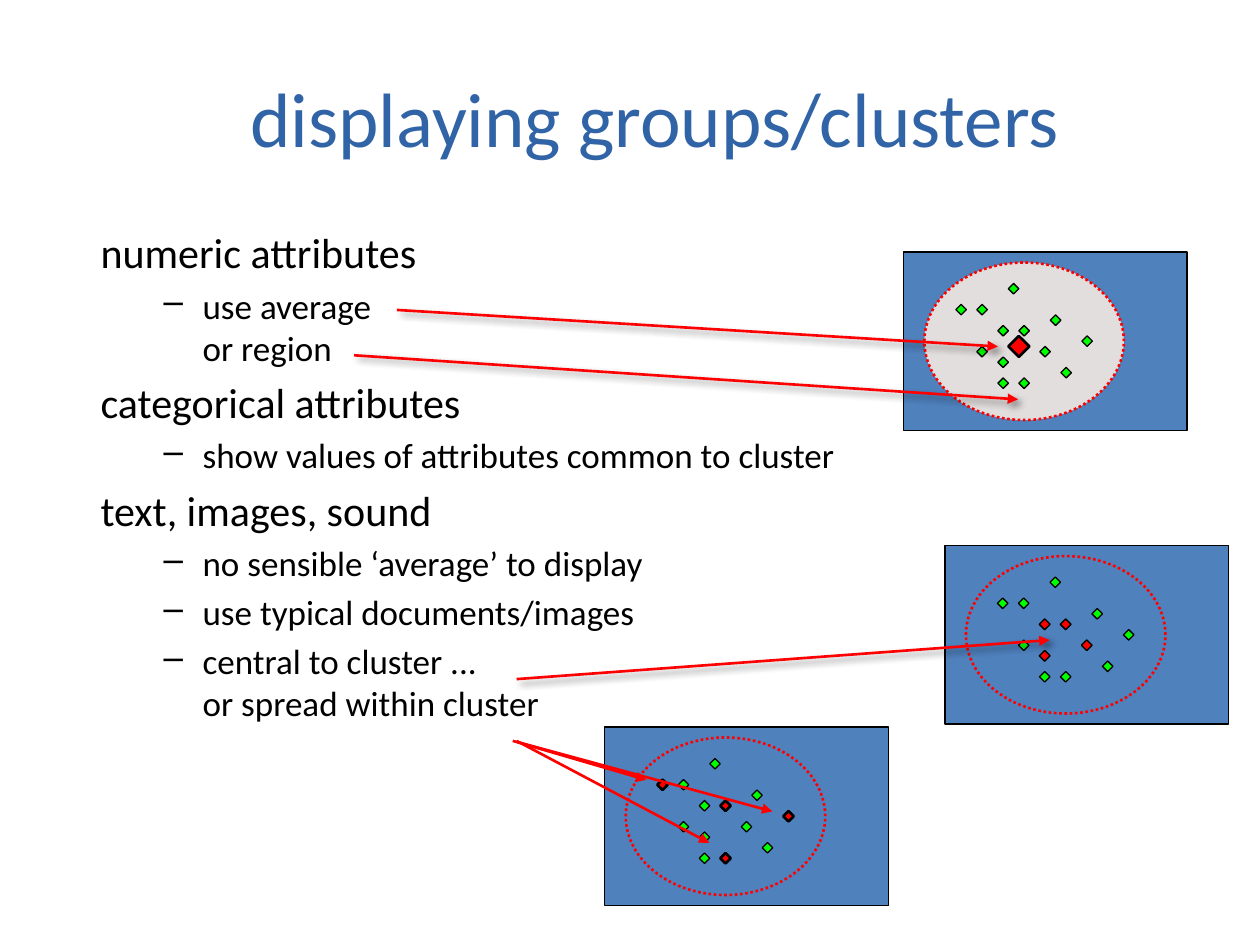
"""Builds a slide on displaying groups and clusters, with three scatter panels."""
from lxml import etree
from pptx import Presentation
from pptx.dml.color import RGBColor
from pptx.enum.dml import MSO_LINE
from pptx.enum.shapes import MSO_CONNECTOR, MSO_SHAPE
from pptx.enum.text import MSO_ANCHOR, PP_ALIGN
from pptx.oxml.ns import qn
from pptx.util import Inches, Pt

RECT, OVAL, DIAMOND = MSO_SHAPE.RECTANGLE, MSO_SHAPE.OVAL, MSO_SHAPE.DIAMOND
STRAIGHT, DOTTED = MSO_CONNECTOR.STRAIGHT, MSO_LINE.ROUND_DOT
TOP, MIDDLE = MSO_ANCHOR.TOP, MSO_ANCHOR.MIDDLE
LEFT, CENTER = PP_ALIGN.LEFT, PP_ALIGN.CENTER

THEME = {
    "font": "Calibri",
    "title": {"size": Pt(44), "color": RGBColor.from_string("3164A6")},
    "levels": [{"size": Pt(24), "color": RGBColor.from_string("000000")},
               {"size": Pt(20), "color": RGBColor.from_string("000000")}],
    "panel": RGBColor.from_string("4F81BD"),
    "region": RGBColor.from_string("E3DEDE"),
    "dot": RGBColor.from_string("00FF00"),
    "red": RGBColor.from_string("FF0000"),
    "black": RGBColor.from_string("000000"),
}
UNIT = 1 / 12
DOTS = [(5, 5), (7, 5), (9, 7), (11, 7), (7, 9), (9, 10), (11, 12),
        (9, 12), (13, 9), (10, 3), (14, 6), (15, 11), (17, 8)]
PANELS = [
    {"at": (7.17, 2), "region": "region", "marks": [(10, 8)], "size": 2, "width": 1.5},
    {"at": (7.5, 4.33), "region": None, "marks": [(9, 7), (11, 7), (9, 10), (13, 9)],
     "size": 1, "width": 0.75},
    {"at": (4.8, 5.77), "region": None, "marks": [(5, 5), (17, 8), (11, 7), (11, 12)],
     "size": 1, "width": 1.5},
]
ARROWS = [
    ((2.81, 2.82), (8.08, 3.17), True),
    ((3.15, 2.46), (7.92, 2.75), True),
    ((4.1, 5.39), (8.33, 5.08), True),
    ((4.07, 5.88), (5.13, 6.19), False),
    ((4.11, 5.89), (6.13, 6.44), False),
    ((4.1, 5.88), (5.63, 6.69), False),
]
BODY = [
    (0, "numeric attributes"),
    (1, "use average\vor region"),
    (0, "categorical attributes"),
    (1, "show values of attributes common to cluster"),
    (0, "text, images, sound"),
    (1, "no sensible ‘average’ to display"),
    (1, "use typical documents/images"),
    (1, "central to cluster ...\vor spread within cluster"),
]

prs = Presentation()
prs.slide_width, prs.slide_height = Inches(10), Inches(7.5)
s = prs.slides.add_slide(prs.slide_layouts[6])


def add_mark(kind, origin, cell, size, fill, line, width):
    x, y = (o + c * UNIT for o, c in zip(origin, cell))
    sp = s.shapes.add_shape(kind, Inches(x), Inches(y),
                            Inches(size[0] * UNIT), Inches(size[1] * UNIT))
    sp.shadow.inherit = False
    if fill:
        sp.fill.solid()
        sp.fill.fore_color.rgb = THEME[fill]
    else:
        sp.fill.background()
    sp.line.color.rgb = THEME[line]
    sp.line.width = Pt(width)
    return sp


def add_text(top, height, anchor, align, items):
    tf = s.shapes.add_textbox(Inches(0.7), Inches(top), Inches(9), Inches(height)).text_frame
    tf.word_wrap = True
    tf.vertical_anchor = anchor
    for i, (level, text, style) in enumerate(items):
        p = tf.paragraphs[0] if i == 0 else tf.add_paragraph()
        p.text, p.level, p.alignment = text, level, align
        if i:
            p.space_before = Pt(style["size"].pt * 0.2)
        if level:
            pPr = p._p.get_or_add_pPr()
            pPr.set("marL", str(Inches(0.81)))
            pPr.set("indent", str(Inches(-0.31)))
            etree.SubElement(pPr, qn("a:buChar"), char="–")
        for r in p.runs:
            r.font.name = THEME["font"]
            r.font.size = style["size"]
            r.font.color.rgb = style["color"]


add_text(0.3, 1.25, MIDDLE, CENTER, [(0, "displaying groups/clusters", THEME["title"])])
add_text(1.75, 4.95, TOP, LEFT,
         [(level, text, THEME["levels"][level]) for level, text in BODY])

for panel in PANELS:
    at = panel["at"]
    add_mark(RECT, at, (0, 0), (27, 17), "panel", "black", 0.75)
    oval = add_mark(OVAL, at, (2, 1), (19, 15), panel["region"], "red", 1.5)
    oval.line.dash_style = DOTTED
    for dot in DOTS:
        add_mark(DIAMOND, at, dot, (1, 1), "dot", "black", 0.75)
    for mark in panel["marks"]:
        add_mark(DIAMOND, at, mark, (panel["size"],) * 2, "red", "black", panel["width"])

for start, end, shadowed in ARROWS:
    cxn = s.shapes.add_connector(STRAIGHT, *(Inches(v) for v in start + end))
    cxn.line.color.rgb = THEME["red"]
    cxn.line.width = Pt(1.5)
    etree.SubElement(cxn.line._get_or_add_ln(), qn("a:tailEnd"), type="triangle")
    effects = etree.SubElement(cxn._element.spPr, qn("a:effectLst"))
    if shadowed:
        shadow = etree.SubElement(effects, qn("a:outerShdw"), blurRad=str(Pt(4)),
                                  dist=str(Pt(3)), dir="2700000", rotWithShape="0")
        tint = etree.SubElement(shadow, qn("a:srgbClr"), val=str(THEME["black"]))
        etree.SubElement(tint, qn("a:alpha"), val="43000")

prs.save("out.pptx")
